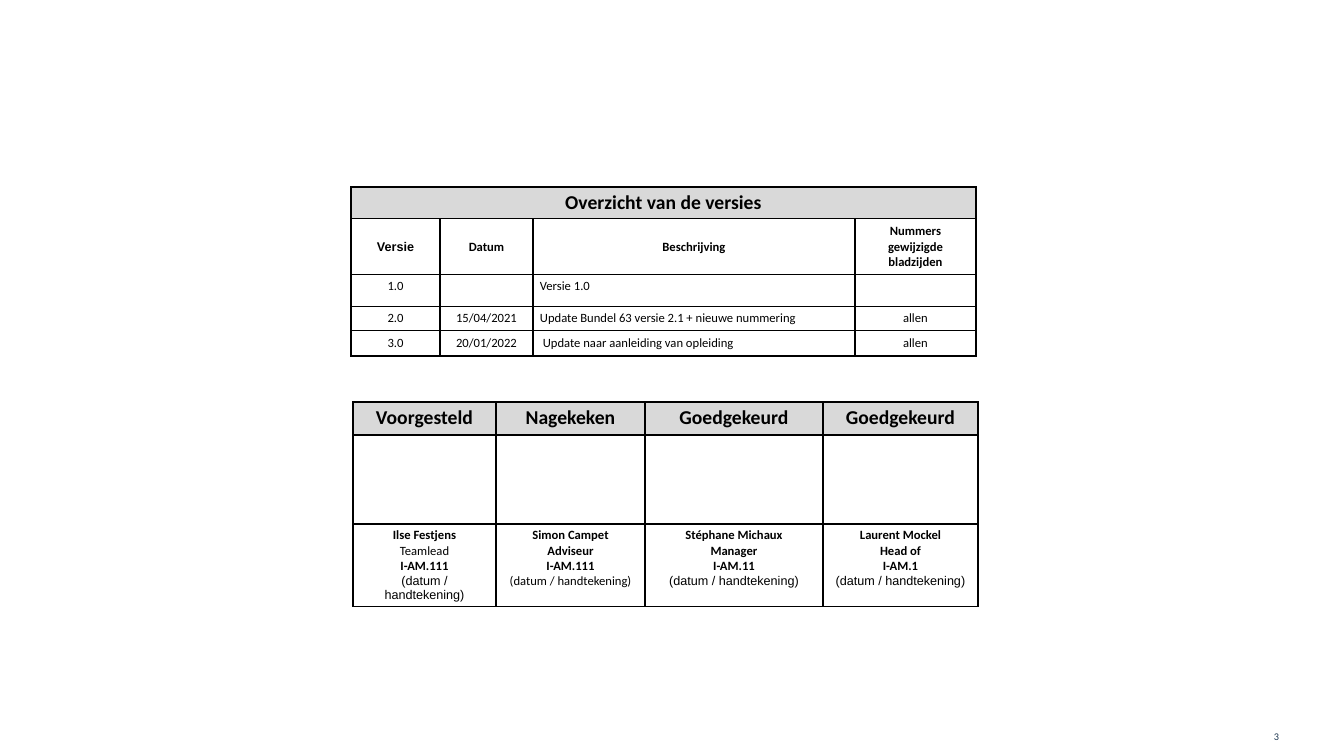
from pptx import Presentation
from pptx.dml.color import RGBColor
from pptx.enum.text import MSO_ANCHOR, PP_ALIGN
from pptx.oxml import parse_xml
from pptx.oxml.ns import nsdecls
from pptx.util import Emu, Pt

# Content: a cell is a list of (text, format) paragraphs
SCALE = 914400 / 100.8
BLACK, WHITE, GREY, NAVY = "000000", "FFFFFF", "D9D9D9", "213A53"

TITLE = {"size": 14, "bold": True, "name": "Calibri"}
BOLD = {"size": 9, "bold": True, "name": "Calibri"}
PLAIN = {"size": 9, "bold": False, "name": "Calibri"}
ARIAL = {"size": 9, "bold": False, "name": "Arial"}
ARIAL_BOLD = {"size": 9, "bold": True, "name": "Arial"}
SIGN = "(datum / handtekening)"

TIGHT = (7, 4)
ROOMY = (10, 5)

APPROVALS = {
    "place": (353, 402),
    "columns": (143, 149, 178, 155),
    "rows": (33, 89, 69),
    "cells": [
        [[(text, TITLE)] for text in
         ("Voorgesteld", "Nagekeken", "Goedgekeurd", "Goedgekeurd")],
        [[], [], [], []],
        [
            [("Ilse Festjens", BOLD), ("Teamlead", PLAIN), ("I-AM.111", BOLD), (SIGN, ARIAL)],
            [("Simon Campet", BOLD), ("Adviseur", BOLD), ("I-AM.111", BOLD), (SIGN, PLAIN)],
            [("Stéphane Michaux", BOLD), ("Manager", BOLD), ("I-AM.11", BOLD), (SIGN, ARIAL)],
            [("Laurent Mockel", BOLD), ("Head of", BOLD), ("I-AM.1", BOLD), (SIGN, ARIAL)],
        ],
    ],
}

VERSION_ROWS = [
    ("1.0", "", "Versie 1.0", ""),
    ("2.0", "15/04/2021", "Update Bundel 63 versie 2.1 + nieuwe nummering", "allen"),
    ("3.0", "20/01/2022", "Update naar aanleiding van opleiding", "allen"),
]
VERSIONS = {
    "place": (351, 187),
    "columns": (89, 93, 322, 121),
    "rows": (31, 56, 32, 23, 26),
    "cells": [
        [[("Overzicht van de versies", TITLE)], [], [], []],
        [[("Versie", ARIAL_BOLD)], [("Datum", BOLD)], [("Beschrijving", BOLD)],
         [("Nummers gewijzigde bladzijden", BOLD)]],
    ] + [[[(text, PLAIN)] if text else [] for text in row] for row in VERSION_ROWS],
}


def px(length):
    return Emu(round(length * SCALE))


def color(value):
    return RGBColor.from_string(value)


def write(para, text, look, ink=BLACK):
    span = para.add_run()
    span.text = text
    for key, value in look.items():
        setattr(span.font, key, Pt(value) if key == "size" else value)
    span.font.color.rgb = color(ink)


def style_cell(cell, fill, margins):
    properties = cell._tc.get_or_add_tcPr()
    for side in ("lnL", "lnR", "lnT", "lnB"):
        properties.append(parse_xml(
            f'<a:{side} {nsdecls("a")} w="12700"><a:solidFill>'
            f'<a:srgbClr val="{BLACK}"/></a:solidFill></a:{side}>'))
    cell.fill.solid()
    cell.fill.fore_color.rgb = color(fill)
    cell.margin_left = cell.margin_right = px(margins[0])
    cell.margin_top = cell.margin_bottom = px(margins[1])


def fill_cell(cell, lines):
    frame = cell.text_frame
    if not lines:
        frame.paragraphs[0]._p.append(
            parse_xml(f'<a:endParaRPr {nsdecls("a")} sz="900"/>'))
    for index, (text, look) in enumerate(lines):
        para = frame.add_paragraph() if index else frame.paragraphs[0]
        para.alignment = PP_ALIGN.CENTER
        write(para, text, look)


def add_grid(page, data):
    columns, rows = data["columns"], data["rows"]
    grid = page.shapes.add_table(
        len(rows), len(columns), *map(px, data["place"]),
        px(sum(columns)), px(sum(rows))).table
    grid.first_row = grid.horz_banding = False
    for column, width in zip(grid.columns, columns):
        column.width = px(width)
    for r, height in enumerate(rows):
        grid.rows[r].height = px(height)
        for c, lines in enumerate(data["cells"][r]):
            # Only the last version row has wider margins
            style_cell(grid.cell(r, c), WHITE if r else GREY, ROOMY if r == 4 else TIGHT)
            fill_cell(grid.cell(r, c), lines)
    return grid


deck = Presentation()
deck.slide_width, deck.slide_height = px(1344), px(756)
page = deck.slides.add_slide(deck.slide_layouts[6])

# Signatures
add_grid(page, APPROVALS)

# Version history: merged title, centred headings, left-aligned descriptions
history = add_grid(page, VERSIONS)
history.cell(0, 0).merge(history.cell(0, 3))
for c in range(4):
    history.cell(1, c).vertical_anchor = MSO_ANCHOR.MIDDLE
for r in range(2, 5):
    history.cell(r, 2).text_frame.paragraphs[0].alignment = PP_ALIGN.LEFT

# Page number
box = page.shapes.add_textbox(px(1264), px(716), px(62), px(40))
box.text_frame.word_wrap = True
box.text_frame.vertical_anchor = MSO_ANCHOR.MIDDLE
write(box.text_frame.paragraphs[0], "3", {"size": 7.3, "name": "Calibri"}, NAVY)

deck.save("out.pptx")
